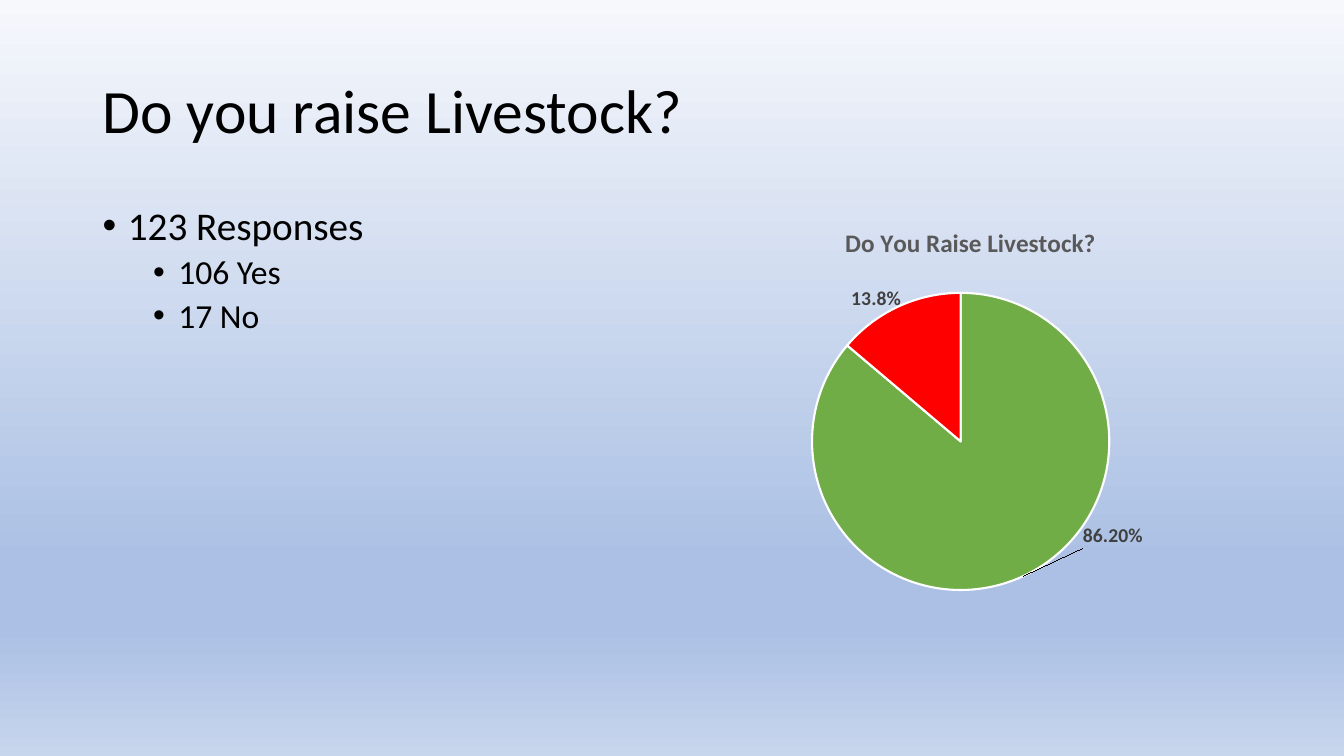
from lxml import etree
from pptx import Presentation
from pptx.chart.data import CategoryChartData
from pptx.dml.color import RGBColor
from pptx.enum.chart import XL_CHART_TYPE as ChartType, XL_LABEL_POSITION as LabelPosition
from pptx.enum.text import MSO_ANCHOR as Anchor
from pptx.oxml.ns import qn
from pptx.util import Inches, Pt

FONT = "Calibri"
BLACK = RGBColor(0x00, 0x00, 0x00)
TITLE_GRAY = RGBColor(0x59, 0x59, 0x59)
LABEL_GRAY = RGBColor(0x40, 0x40, 0x40)
WHITE = RGBColor(0xFF, 0xFF, 0xFF)
GREEN = RGBColor(0x70, 0xAD, 0x47)
RED = RGBColor(0xFF, 0x00, 0x00)
SKY_STOPS = [
    (0, RGBColor(0xF6, 0xF8, 0xFC)),
    (74, RGBColor(0xAB, 0xC0, 0xE4)),
    (83, RGBColor(0xAB, 0xC0, 0xE4)),
    (100, RGBColor(0xC7, 0xD5, 0xED)),
]

# category, value, colour, label, label offset as a share of the chart
ANSWERS = [
    ("Yes", 106, GREEN, "86.20%", (0.1, -0.12)),
    ("No", 17, RED, "13.8%", (0.01, 0.02)),
]


def paint_background(slide):
    fill = slide.background.fill
    fill.gradient()
    fill.gradient_angle = 270
    stop_list = slide.element.find(".//" + qn("a:gsLst"))
    for stop in list(stop_list):
        stop_list.remove(stop)
    for percent, color in SKY_STOPS:
        stop = etree.SubElement(stop_list, qn("a:gs"), pos=str(percent * 1000))
        etree.SubElement(stop, qn("a:srgbClr"), val=str(color))


def style_font(font, size, color, bold=False):
    font.name, font.size, font.bold = FONT, Pt(size), bold
    font.color.rgb = color


def write(paragraph, text, size, color=BLACK, bold=False, space_before=0, indent=None):
    """Fill a paragraph; an indent in inches also gives it a bullet."""
    run = paragraph.add_run()
    run.text = text
    style_font(run.font, size, color, bold)
    paragraph.space_before = Pt(space_before)
    if indent is not None:
        paragraph.line_spacing = 0.9
        properties = paragraph._p.get_or_add_pPr()
        properties.set("marL", str(Inches(indent)))
        properties.set("indent", str(Inches(-0.25)))
        etree.SubElement(properties, qn("a:buFont"), typeface="Arial")
        etree.SubElement(properties, qn("a:buChar"), char="•")


def add_text_frame(slide, box, anchor):
    frame = slide.shapes.add_textbox(*map(Inches, box)).text_frame
    frame.word_wrap = True
    frame.vertical_anchor = anchor
    return frame


def add_title(slide, box):
    paragraph = add_text_frame(slide, box, Anchor.MIDDLE).paragraphs[0]
    write(paragraph, "Do you raise Livestock?", 44)
    paragraph.line_spacing = 0.9


def add_responses(slide, box):
    frame = add_text_frame(slide, box, Anchor.TOP)
    write(frame.paragraphs[0], "123 Responses", 28, space_before=10, indent=0.25)
    for category, count, *_ in ANSWERS:
        paragraph = frame.add_paragraph()
        paragraph.level = 1
        write(paragraph, f"{count} {category}", 24, space_before=5, indent=0.75)


def set_layout(parent, index, **settings):
    """Give a chart part a manual layout, as its child at the given index."""
    for old_layout in parent.findall(qn("c:layout")):
        parent.remove(old_layout)
    layout = etree.Element(qn("c:layout"))
    manual = etree.SubElement(layout, qn("c:manualLayout"))
    for name, value in settings.items():
        etree.SubElement(manual, qn(f"c:{name}"), val=str(value))
    parent.insert(index, layout)


def add_pie(slide, box):
    data = CategoryChartData()
    data.categories = [answer[0] for answer in ANSWERS]
    data.add_series("Series 1", [answer[1] for answer in ANSWERS])
    chart = slide.shapes.add_chart(ChartType.PIE, *map(Inches, box), data).chart
    style_font(chart.font, 10, BLACK)
    chart.has_legend = False
    chart.has_title = True
    write(chart.chart_title.text_frame.paragraphs[0], "Do You Raise Livestock?",
          18, TITLE_GRAY, bold=True)

    plot = chart.plots[0]
    plot.vary_by_categories = True
    series = plot.series[0]
    labels = series.data_labels
    labels.show_value = True
    labels.position = LabelPosition.OUTSIDE_END
    style_font(labels.font, 14, LABEL_GRAY, bold=True)
    for index, (_, _, color, label, _) in enumerate(ANSWERS):
        point = series.points[index]
        point.format.fill.solid()
        point.format.fill.fore_color.rgb = color
        point.format.line.color.rgb = WHITE
        point.format.line.width = Pt(1.5)
        write(point.data_label.text_frame.paragraphs[0], label, 14, LABEL_GRAY, bold=True)
        point.data_label.position = LabelPosition.OUTSIDE_END

    root = chart.element
    set_layout(root.find(".//" + qn("c:title")), 1, xMode="edge", yMode="edge", x=0.28, y=0.04)
    set_layout(root.find(".//" + qn("c:plotArea")), 0, layoutTarget="inner",
               xMode="edge", yMode="edge", x=0.23, y=0.19, w=0.52, h=0.62)
    for label_element, answer in zip(root.iter(qn("c:dLbl")), ANSWERS):
        x, y = answer[-1]
        set_layout(label_element, 1, x=x, y=y)


def main():
    presentation = Presentation()
    presentation.slide_width, presentation.slide_height = Inches(13.33), Inches(7.5)
    slide = presentation.slides.add_slide(presentation.slide_layouts[6])
    paint_background(slide)
    add_title(slide, (0.92, 0.4, 11.5, 1.45))
    add_responses(slide, (0.92, 2, 5.67, 4.76))
    add_pie(slide, (6.75, 2, 5.67, 4.76))
    presentation.save("out.pptx")


if __name__ == "__main__":
    main()
